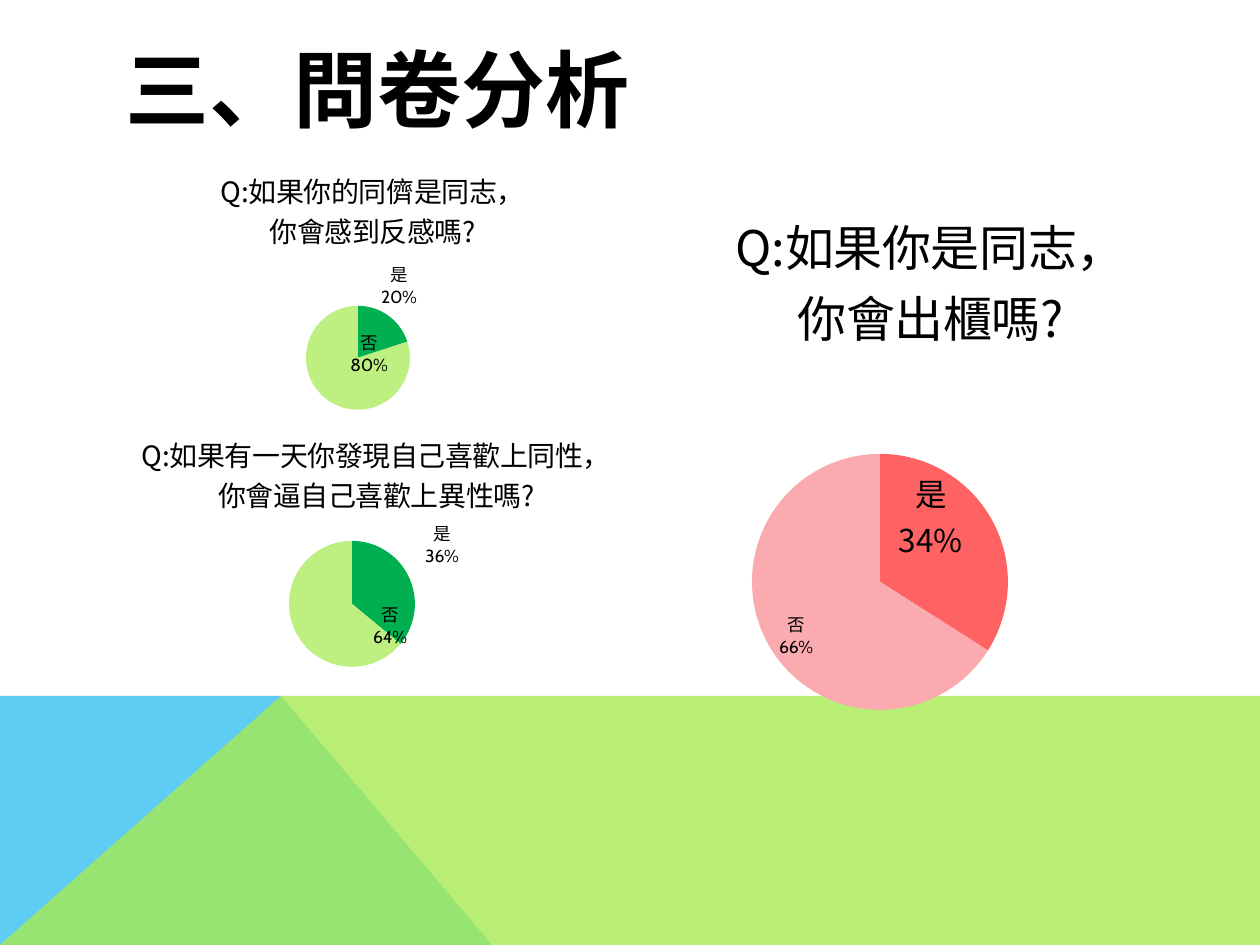
import math

from lxml import etree
from pptx import Presentation
from pptx.chart.data import CategoryChartData
from pptx.dml.color import RGBColor
from pptx.enum.chart import XL_CHART_TYPE, XL_LABEL_POSITION
from pptx.enum.text import MSO_ANCHOR, PP_ALIGN
from pptx.oxml import parse_xml
from pptx.oxml.ns import nsdecls, qn
from pptx.util import Emu, Pt

PIE = XL_CHART_TYPE.PIE
CENTER = XL_LABEL_POSITION.CENTER
PX = 914400 / 126
CJK, LATIN = "Noto Sans CJK SC", "Cabin"


def style(run, size, bold=False):
    """Give a run the black CJK face for both Latin and East Asian text."""
    run.font.size, run.font.bold, run.font.name = Pt(size), bold, CJK
    run.font.color.rgb = RGBColor.from_string("000000")
    etree.SubElement(run.font._element, qn("a:ea"), typeface=CJK)


def layout(x, y, size=None):
    """Build a manual chart layout from fractions of the chart frame."""
    edge = "" if size is None else '<c:xMode val="edge"/><c:yMode val="edge"/>'
    target = ""
    extent = ""
    if size:
        target = '<c:layoutTarget val="inner"/>'
        extent = f'<c:w val="{size[0]:.4f}"/><c:h val="{size[1]:.4f}"/>'
    return parse_xml(
        f'<c:layout {nsdecls("c")}><c:manualLayout>{target}{edge}'
        f'<c:x val="{x:.4f}"/><c:y val="{y:.4f}"/>{extent}'
        "</c:manualLayout></c:layout>")


prs = Presentation()
prs.slide_width, prs.slide_height = Emu(round(1260 * PX)), Emu(round(945 * PX))
slide = prs.slides.add_slide(prs.slide_layouts[5])

# Coloured bands along the bottom
bands = [
    ("5ECCF3", 100, [(0, 945), (0, 696), (281, 696), (492, 945)]),
    ("A7EA52", 80, [(0, 945), (281, 696), (1260, 696), (1260, 945)]),
]
for color, opacity, corners in bands:
    builder = slide.shapes.build_freeform(*corners[0], scale=PX)
    builder.add_line_segments(corners[1:], close=True)
    band = builder.convert_to_shape()
    band.shadow.inherit = False
    band.fill.solid()
    band.fill.fore_color.rgb = RGBColor.from_string(color)
    band.line.fill.background()
    if opacity < 100:
        srgb = band.fill._xPr.find(".//" + qn("a:srgbClr"))
        etree.SubElement(srgb, qn("a:alpha"), val=str(opacity * 1000))

heading = slide.shapes.title
heading.left, heading.top, heading.width, heading.height = (
    Emu(round(v * PX)) for v in (113, 50, 1036, 76))
heading.text_frame.vertical_anchor = MSO_ANCHOR.MIDDLE
heading_line = heading.text_frame.paragraphs[0]
heading_line.alignment = PP_ALIGN.LEFT
heading_run = heading_line.add_run()
heading_run.text = "三、問卷分析"
style(heading_run, 48, True)

# frame, question, its size and corner, yes share, colours,
# pie centre and radius, label centres, size of a hand-written yes label
GREENS, REDS = ("00B050", "BDEF81"), ("FE6262", "FBABAF")
surveys = [
    ((44, 135, 626, 340), ("Q:如果你的同儕是同志，", "你會感到反感嗎?"), 16, (217, 165),
     20, GREENS, (358, 358, 52), ((399, 285), (369, 353)), None),
    ((25, 354, 655, 357), ("Q:如果有一天你發現自己喜歡上同性，", "你會逼自己喜歡上異性嗎?"), 16, (138, 429),
     36, GREENS, (352, 604, 63), ((442, 544), (390, 625)), None),
    ((412, 116, 983, 645), ("Q:如果你是同志，", "你會出櫃嗎?"), 28, (732, 204),
     34, REDS, (880, 582, 128), ((931, 516), (796, 635)), 18),
]
for frame, question, size, corner, yes, colors, pie, labels, yes_size in surveys:
    left, top, width, height = frame
    cx, cy, radius = pie
    answers = CategoryChartData(number_format="General")
    answers.categories = ["是", "否"]
    answers.add_series("Series 1", (yes, 100 - yes))
    chart = slide.shapes.add_chart(
        PIE, *(Emu(round(v * PX)) for v in frame), answers).chart
    chart.has_legend = False
    chart.font.size, chart.font.name = Pt(10), LATIN
    chart.font.color.rgb = RGBColor.from_string("000000")
    chart.element.find(qn("c:chart")).addnext(parse_xml(
        f'<c:spPr {nsdecls("c", "a")}><a:noFill/><a:ln><a:noFill/></a:ln></c:spPr>'))

    chart.has_title = True
    title_frame = chart.chart_title.text_frame
    for i, line in enumerate(question):
        paragraph = title_frame.add_paragraph() if i else title_frame.paragraphs[0]
        run = paragraph.add_run()
        run.text = line
        style(run, size)
    title = chart.element.find(".//" + qn("c:title"))
    for old in title.findall(qn("c:layout")):
        title.remove(old)
    title.find(qn("c:tx")).addnext(
        layout((corner[0] - left) / width, (corner[1] - top) / height, ()))

    plot_area = chart.element.find(".//" + qn("c:plotArea"))
    for old in plot_area.findall(qn("c:layout")):
        plot_area.remove(old)
    plot_area.insert(0, layout(
        (cx - radius - left) / width, (cy - radius - top) / height,
        (2 * radius / width, 2 * radius / height)))

    plot = chart.plots[0]
    plot.vary_by_categories = True
    # Middle of each slice, clockwise from twelve o'clock
    angles = (math.pi * yes / 100, math.pi * (1 + yes / 100))
    for i, (color, angle, (x, y)) in enumerate(zip(colors, angles, labels)):
        point = plot.series[0].points[i]
        point.format.fill.solid()
        point.format.fill.fore_color.rgb = RGBColor.from_string(color)
        point.format.line.fill.background()
        label = point.data_label
        if yes_size and i == 0:
            lines = label.text_frame
            for j, text in enumerate(("是", f"{yes}%")):
                paragraph = lines.add_paragraph() if j else lines.paragraphs[0]
                run = paragraph.add_run()
                run.text = text
                style(run, yes_size)
        else:
            label.font.size, label.font.name = Pt(10), LATIN
            label.font.color.rgb = RGBColor.from_string("000000")
        label.position = CENTER

        d_lbl = chart.element.findall(".//" + qn("c:dLbl"))[i]
        for old in d_lbl.findall(qn("c:layout")):
            d_lbl.remove(old)
        dx = x - cx - radius / 2 * math.sin(angle)
        dy = y - cy + radius / 2 * math.cos(angle)
        d_lbl.find(qn("c:idx")).addnext(layout(dx / width, dy / height))
        for tag, shown in (("showVal", 0), ("showCatName", 1), ("showPercent", 1)):
            d_lbl.find(qn("c:" + tag)).set("val", str(shown))
        etree.SubElement(d_lbl, qn("c:separator")).text = "\n"

    series_labels = plot.series[0].data_labels
    series_labels.show_value = False
    series_labels.show_category_name = True
    series_labels.show_percentage = True
    for leader in chart.element.iter(qn("c:showLeaderLines")):
        leader.set("val", "0")

prs.save("out.pptx")
